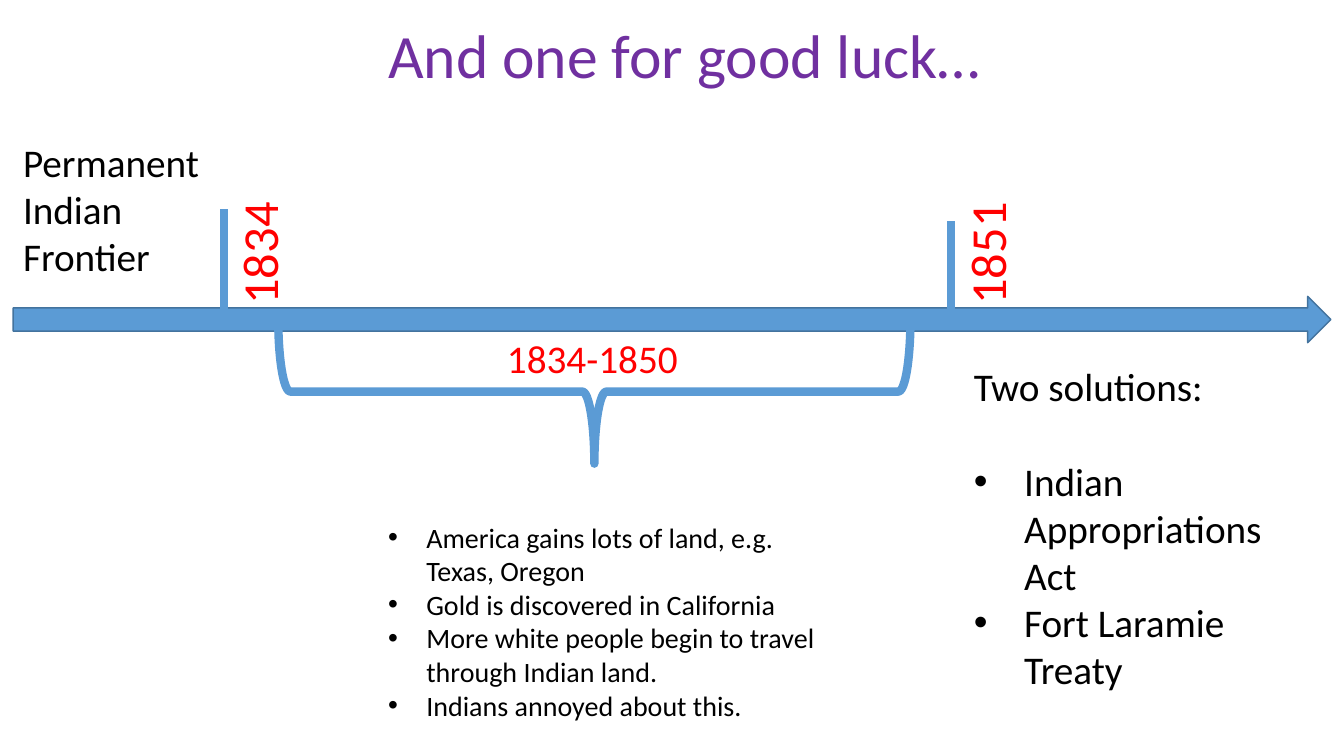
from dataclasses import dataclass

from lxml.etree import SubElement
from pptx import Presentation
from pptx.dml.color import RGBColor as RGB
from pptx.enum.shapes import MSO_CONNECTOR as LINK, MSO_SHAPE as SHAPE
from pptx.enum.text import MSO_ANCHOR as ANCHOR, MSO_AUTO_SIZE as FIT, PP_ALIGN as ALIGN
from pptx.oxml.ns import qn
from pptx.util import Inches, Pt


@dataclass(frozen=True)
class Theme:
    font: str = "Calibri"
    ink: str = "000000"
    date: str = "FF0000"
    title: str = "7030A0"
    blue: str = "5B9BD5"
    edge: str = "43739E"
    head: int = 44
    year: int = 36
    body: int = 28
    note: int = 20
    thick: int = 6


THEME = Theme()


def place(shape, box):
    shape.left, shape.top, shape.width, shape.height = map(Inches, box)


def set_bullet(para, indent):
    props = para._p.get_or_add_pPr()
    props.set("marL", str(Inches(indent)))
    props.set("indent", str(-Inches(indent)))
    SubElement(props, qn("a:buFont"), typeface="Arial")
    SubElement(props, qn("a:buChar"), char="•")


def write(shape, *lines, size=THEME.body, color=THEME.ink, indent=0, plain=0, gap=0):
    """Fill a shape; lines after the first `plain` ones get bullets if indented."""
    frame = shape.text_frame
    frame.word_wrap = True
    frame.auto_size = FIT.NONE
    frame.vertical_anchor = ANCHOR.TOP
    for i, line in enumerate(lines):
        para = frame.paragraphs[0] if i == 0 else frame.add_paragraph()
        para.text = line
        para.alignment = ALIGN.LEFT
        if gap and i == plain:
            para.space_before = Pt(gap)
        if indent and i >= plain:
            set_bullet(para, indent)
        font = para.font
        font.name, font.size = THEME.font, Pt(size)
        font.color.rgb = RGB.from_string(color)


def add_text(slide, box, *lines, turn=0, **style):
    shape = slide.shapes.add_textbox(*map(Inches, box))
    shape.rotation = turn
    write(shape, *lines, **style)


def stroke(shape, color, width):
    shape.line.color.rgb = RGB.from_string(color)
    shape.line.width = Pt(width)


def add_arrow(slide, box):
    arrow = slide.shapes.add_shape(SHAPE.RIGHT_ARROW, *map(Inches, box))
    arrow.shadow.inherit = False
    arrow.fill.solid()
    arrow.fill.fore_color.rgb = RGB.from_string(THEME.blue)
    stroke(arrow, THEME.edge, 1)


def add_brace(slide, box):
    brace = slide.shapes.add_shape(SHAPE.RIGHT_BRACE, *map(Inches, box))
    brace.shadow.inherit = False
    brace.rotation = 90
    brace.fill.background()
    stroke(brace, THEME.blue, THEME.thick)


def add_mark(slide, year, x, top, base, left):
    """Draw a tick above the time line with its year turned upright."""
    tick = slide.shapes.add_connector(
        LINK.STRAIGHT, *map(Inches, (x, base, x, top)))
    stroke(tick, THEME.blue, THEME.thick)
    SubElement(tick._element.spPr, qn("a:effectLst"))
    add_text(slide, (left, 2.08, 1.37, 0.71), year, turn=270,
             size=THEME.year, color=THEME.date)


def main():
    deck = Presentation()
    deck.slide_width, deck.slide_height = Inches(13.33), Inches(7.5)
    slide = deck.slides.add_slide(deck.slide_layouts[5])

    # Title
    title = slide.shapes.title
    place(title, (3.75, 0.12, 6.15, 0.84))
    write(title, "And one for good luck…", size=THEME.head, color=THEME.title)

    # Time line
    add_arrow(slide, (0.13, 2.94, 13.07, 0.46))
    add_mark(slide, "1834", 2.22, 2.07, 3.15, 1.88)
    add_mark(slide, "1851", 9.43, 2.19, 3.17, 9.1)
    add_brace(slide, (5.18, 0.75, 1.43, 6.27))
    add_text(slide, (4.93, 3.27, 3.79, 0.57), "1834-1850", color=THEME.date)

    # Events
    add_text(slide, (0.13, 1.32, 2.09, 1.51), "Permanent Indian Frontier")
    add_text(slide, (3.75, 5.11, 4.71, 2.12),
             "America gains lots of land, e.g. Texas, Oregon",
             "Gold is discovered in California",
             "More white people begin to travel through Indian land.",
             "Indians annoyed about this.",
             size=THEME.note, indent=0.38)
    add_text(slide, (9.56, 3.55, 3.54, 3.4),
             "Two solutions:", "Indian Appropriations Act", "Fort Laramie Treaty",
             indent=0.5, plain=1, gap=34)

    deck.save("out.pptx")


if __name__ == "__main__":
    main()
